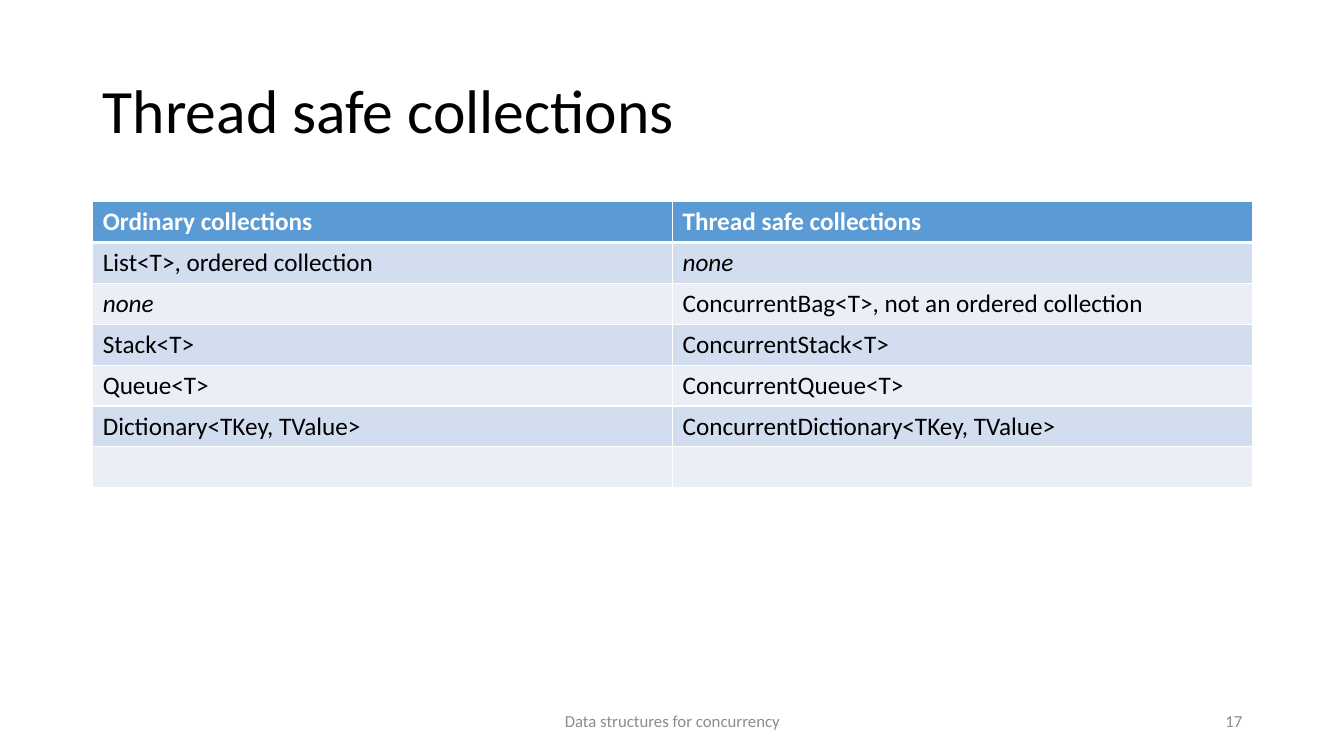
from dataclasses import dataclass

from lxml.etree import SubElement
from pptx import Presentation
from pptx.dml.color import RGBColor
from pptx.enum.text import MSO_ANCHOR, PP_ALIGN
from pptx.oxml.ns import qn
from pptx.slide import Slide
from pptx.table import _Cell
from pptx.text.text import TextFrame
from pptx.util import Inches, Pt

WHITE = RGBColor(0xFF, 0xFF, 0xFF)
BLACK = RGBColor(0, 0, 0)
GREY = RGBColor(0x8C, 0x8C, 0x8C)
BLUE = RGBColor(0x5B, 0x9B, 0xD5)
BANDS = (RGBColor(0xEA, 0xEF, 0xF7), RGBColor(0xD2, 0xDE, 0xEF))

LEFT, WIDTH = 0.92, 11.5
NONE = "none"
ROWS = (
    ("Ordinary collections", "Thread safe collections"),
    ("List<T>, ordered collection", NONE),
    (NONE, "ConcurrentBag<T>, not an ordered collection"),
    ("Stack<T>", "ConcurrentStack<T>"),
    ("Queue<T>", "ConcurrentQueue<T>"),
    ("Dictionary<TKey, TValue>", "ConcurrentDictionary<TKey, TValue>"),
    ("", ""),
)


@dataclass(frozen=True)
class Note:
    text: str
    left: float
    width: float
    align: PP_ALIGN


NOTES = (
    Note("Data structures for concurrency", 4.42, 4.5, PP_ALIGN.CENTER),
    Note("17", 9.42, 3, PP_ALIGN.RIGHT),
)


def write(frame: TextFrame, text: str, align: PP_ALIGN, size: float,
          color: RGBColor, **extra: bool) -> None:
    line = frame.paragraphs[0]
    line.alignment = align
    font = line.font
    if text:
        run = line.add_run()
        run.text = text
        font = run.font
    look = {"name": "Calibri", "size": Pt(size), **extra}
    for key, value in look.items():
        setattr(font, key, value)
    font.color.rgb = color


def edge(cell: _Cell, head: bool) -> None:
    props = cell._tc.get_or_add_tcPr()
    for side in "LRTB":
        width = Pt(3 if head and side == "B" else 1)
        line = SubElement(props, qn(f"a:ln{side}"), w=str(width))
        fill = SubElement(line, qn("a:solidFill"))
        SubElement(fill, qn("a:srgbClr"), val=str(WHITE))


def add_title(slide: Slide) -> None:
    title = slide.shapes.title
    place = {"left": LEFT, "top": 0.4, "width": WIDTH, "height": 1.45}
    for key, value in place.items():
        setattr(title, key, Inches(value))
    frame = title.text_frame
    frame.vertical_anchor = MSO_ANCHOR.MIDDLE
    write(frame, "Thread safe collections", PP_ALIGN.LEFT, 44, BLACK)
    frame.paragraphs[0].line_spacing = 0.9


def add_grid(slide: Slide) -> None:
    table = slide.shapes.add_table(
        len(ROWS), len(ROWS[0]), Inches(LEFT), Inches(2),
        Inches(WIDTH), Inches(2.84)).table
    for r, row in enumerate(ROWS):
        head = r == 0
        for c, text in enumerate(row):
            cell = table.cell(r, c)
            edge(cell, head)
            cell.fill.solid()
            cell.fill.fore_color.rgb = BLUE if head else BANDS[r % 2]
            write(cell.text_frame, text, PP_ALIGN.LEFT, 18,
                  WHITE if head else BLACK, bold=head, italic=text == NONE)


def add_note(slide: Slide, note: Note) -> None:
    box = slide.shapes.add_textbox(
        Inches(note.left), Inches(6.95), Inches(note.width), Inches(0.4))
    frame = box.text_frame
    look = {"word_wrap": True, "vertical_anchor": MSO_ANCHOR.MIDDLE}
    for key, value in look.items():
        setattr(frame, key, value)
    write(frame, note.text, note.align, 12, GREY)


def main() -> None:
    deck = Presentation()
    deck.slide_width, deck.slide_height = Inches(13.33), Inches(7.5)
    slide = deck.slides.add_slide(deck.slide_layouts.get_by_name("Title Only"))
    add_title(slide)
    add_grid(slide)
    for note in NOTES:
        add_note(slide, note)
    deck.save("out.pptx")


if __name__ == "__main__":
    main()
